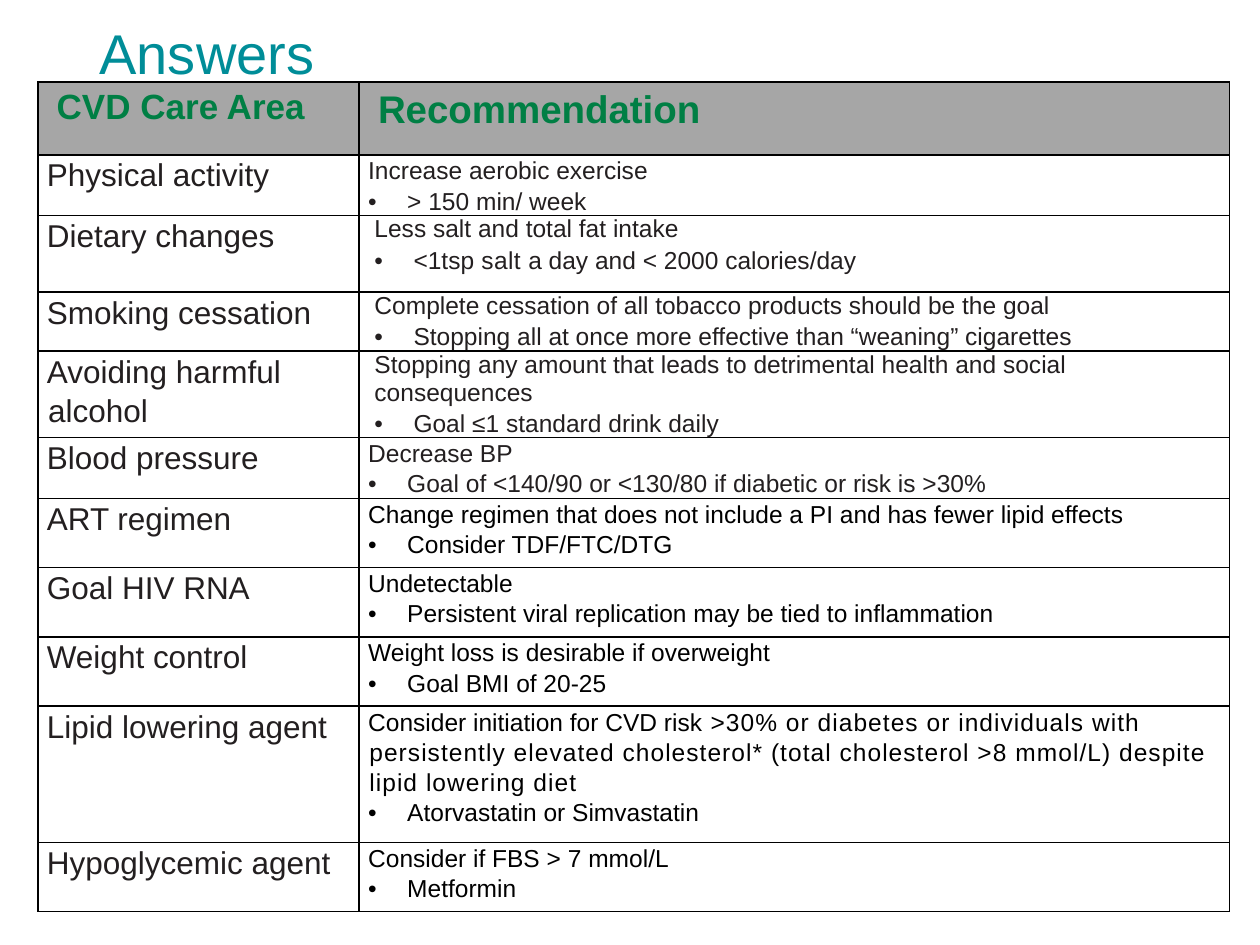
from lxml.etree import SubElement
from pptx import Presentation
from pptx.dml.color import RGBColor as RGB
from pptx.enum.text import MSO_ANCHOR as Anchor, MSO_AUTO_SIZE as Auto, PP_ALIGN as Align
from pptx.oxml.ns import qn
from pptx.util import Pt

INK, BLACK, GREEN, TEAL, GRAY = "231F20", "000000", "007F44", "008D98", "A6A6A6"
HEADS = [("CVD Care Area", 20), ("Recommendation", 22)]
COLS = [183.6, 497.5]

# Row height, care area, advice, bulleted goal, advice colour, loose layout.
# Text is a string, or a list of (part, letter spacing) pairs.
ROWS = [
    (34.5, "Physical activity", "Increase aerobic exercise", "> 150 min/ week", INK, False),
    (43.9, "Dietary changes", "Less salt and total fat intake",
     [("<1tsp", 0), (" salt ", 0.2), ("a day and < 2000 calories/day", 0)], INK, True),
    (33.7, "Smoking cessation", "Complete cessation of all tobacco products should be the goal",
     "Stopping all at once more effective than “weaning” cigarettes", INK, True),
    (49.4, "Avoiding harmful alcohol",
     "Stopping any amount that leads to detrimental health and social consequences",
     "Goal ≤1 standard drink daily", INK, True),
    (34.5, "Blood pressure", "Decrease BP",
     "Goal of <140/90 or <130/80 if diabetic or risk is >30%", INK, False),
    (39.6, "ART regimen", "Change regimen that does not include a PI and has fewer lipid effects",
     "Consider TDF/FTC/DTG", BLACK, False),
    (39.6, "Goal HIV RNA", "Undetectable",
     "Persistent viral replication may be tied to inflammation", BLACK, False),
    (39.6, "Weight control", "Weight loss is desirable if overweight",
     "Goal BMI of 20-25", BLACK, False),
    (77.8, "Lipid lowering agent",
     [("Consider initiation for CVD risk", 0),
      (" >30% or diabetes or individuals with persistently elevated cholesterol* "
       "(total cholesterol >8 mmol/L) despite lipid lowering diet", 0.6)],
     "Atorvastatin or Simvastatin", BLACK, False),
    (39.6, "Hypoglycemic agent", "Consider if FBS > 7 mmol/L", "Metformin", BLACK, False),
]


def color(code):
    return RGB.from_string(code)


def style(para, size, code, bold=False):
    font = para.font
    font.name, font.size, font.bold = "Arial", Pt(size), bold
    font.color.rgb = color(code)


def write(para, text, size, code, bold=False, left=0.72, hang=0.72, bullet=False):
    """Fill a paragraph; left and hang set its indent."""
    para.alignment = Align.LEFT
    props = para._p.get_or_add_pPr()
    props.set("marL", str(Pt(left)))
    props.set("indent", str(-Pt(hang)))
    if bullet:
        SubElement(props, qn("a:buFont"), typeface="Arial")
        SubElement(props, qn("a:buChar"), char="•")
    else:
        SubElement(props, qn("a:buNone"))
    for part, gap in [(text, 0)] if isinstance(text, str) else text:
        run = para.add_run()
        run.text = part
        if gap:
            run._r.get_or_add_rPr().set("spc", str(round(gap * 100)))
    style(para, size, code, bold)


def border(cell):
    props = cell._tc.get_or_add_tcPr()
    for place, side in enumerate(("lnL", "lnR", "lnT", "lnB")):
        line = SubElement(props, qn("a:" + side), w=str(Pt(1)))
        fill = SubElement(line, qn("a:solidFill"))
        SubElement(fill, qn("a:srgbClr"), val=BLACK)
        props.remove(line)
        props.insert(place, line)


def prepare(cell, side, top=0, fill=None):
    """Set a cell's margins, fill and border."""
    cell.margin_left = cell.margin_right = Pt(side)
    cell.margin_top, cell.margin_bottom = Pt(top), Pt(0)
    cell.vertical_anchor = Anchor.TOP
    if fill:
        cell.fill.solid()
        cell.fill.fore_color.rgb = color(fill)
    else:
        cell.fill.background()
    border(cell)


def add_head(cell, text, size):
    prepare(cell, 10.8, 1.44, GRAY)
    para = cell.text_frame.paragraphs[0]
    write(para, text, size, GREEN, bold=True)
    para.line_spacing = 1.1


def add_area(cell, text):
    prepare(cell, 5.2)
    para = cell.text_frame.paragraphs[0]
    write(para, text, 18, INK)
    para.line_spacing = 1.1


def add_advice(cell, note, goal, code, loose):
    prepare(cell, 5.2)
    frame = cell.text_frame
    first, last = frame.paragraphs[0], frame.add_paragraph()
    if loose:
        write(first, note, 14, code, left=3.6, hang=0)
        write(last, goal, 14, code, left=25.9, hang=22.3, bullet=True)
        last.space_before = Pt(2.2)
    else:
        write(first, note, 14, code)
        write(last, goal, 14, code, left=22.3, hang=22.3, bullet=True)
        first.line_spacing = last.line_spacing = 1.1


def add_grid(slide):
    heights = [41.7] + [row[0] for row in ROWS]
    shape = slide.shapes.add_table(len(heights), 2, Pt(21.6), Pt(46.8),
                                   Pt(sum(COLS)), Pt(sum(heights)))
    table = shape.table
    table.first_row = table.horz_banding = False
    for col, width in zip(table.columns, COLS):
        col.width = Pt(width)
    for row, height in zip(table.rows, heights):
        row.height = Pt(height)
    for col, (text, size) in enumerate(HEADS):
        add_head(table.cell(0, col), text, size)
    for row, (_, area, *advice) in enumerate(ROWS, 1):
        add_area(table.cell(row, 0), area)
        add_advice(table.cell(row, 1), *advice)


def set_title(slide, text):
    title = slide.shapes.title
    title.left, title.top, title.width, title.height = Pt(49.7), Pt(11.5), Pt(620.6), Pt(118.8)
    frame = title.text_frame
    frame.auto_size, frame.vertical_anchor = Auto.NONE, Anchor.TOP
    frame.text = text
    para = frame.paragraphs[0]
    para.alignment, para.line_spacing = Align.LEFT, 0.9
    style(para, 32, TEAL)


def main():
    deck = Presentation()
    deck.slide_width, deck.slide_height = Pt(720), Pt(540)
    slide = deck.slides.add_slide(deck.slide_layouts[5])
    set_title(slide, "Answers")
    add_grid(slide)
    deck.save("out.pptx")


if __name__ == "__main__":
    main()
